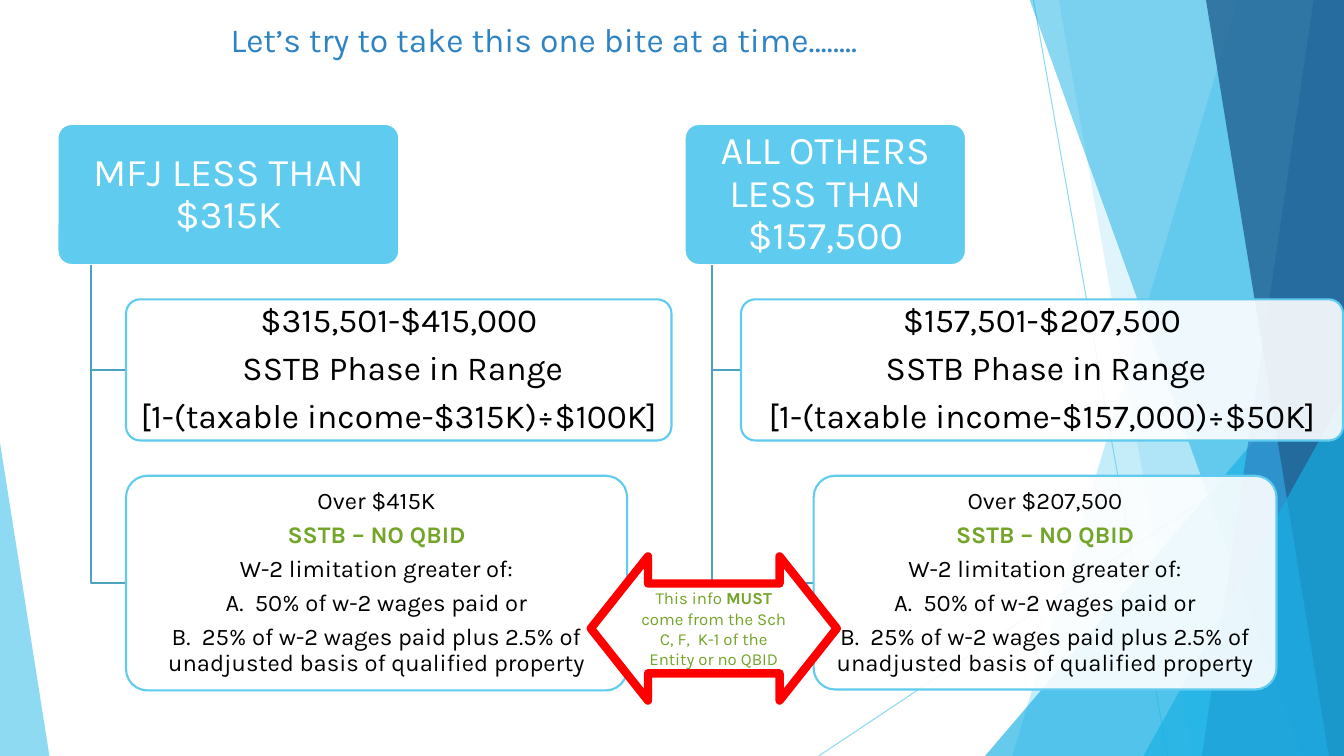
import pptx
import pptx.dml.color
import pptx.enum.shapes
import pptx.enum.text
import pptx.oxml
import pptx.oxml.ns
import pptx.util

PX = 9144
WIDTH, HEIGHT = 1333, 750
FONT = "Karla"
SKY, CYAN, BLUE, NAVY = "5FCBEF", "17B0E4", "2E83C3", "226292"
WHITE, BLACK, RED, GREEN, BRANCH = "FFFFFF", "000000", "FF0000", "72A528", "4CA3BF"
PRESET = pptx.enum.shapes.MSO_SHAPE
CENTER = pptx.enum.text.PP_ALIGN.CENTER
MIDDLE = pptx.enum.text.MSO_ANCHOR.MIDDLE

COLUMNS = [
    {
        "header": (57, 339, "MFJ LESS THAN $315K"),
        "phase": (125, 541, ["$315,501-$415,000", " SSTB Phase in Range",
                             "[1-(taxable income-$315K)÷$100K]"]),
        "over": (125, 497, 213, "Over $415K"),
    },
    {
        "header": (679, 279, "ALL OTHERS LESS THAN $157,500"),
        "phase": (735, 597, ["$157,501-$207,500", " SSTB Phase in Range",
                             "[1-(taxable income-$157,000)÷$50K]"]),
        "over": (807, 459, 212, "Over $207,500"),
    },
]
LIMITATION = [
    "W-2 limitation greater of:",
    "A.  50% of w-2 wages paid or",
    "B.  25% of w-2 wages paid plus 2.5% of unadjusted basis of qualified property",
]


def px(*lengths):
    return [pptx.util.Emu(length * PX) for length in lengths]


def paint(fill, color, opacity=100):
    fill.solid()
    fill.fore_color.rgb = pptx.dml.color.RGBColor.from_string(color)
    if opacity < 100:
        element = fill._xPr.find(".//" + pptx.oxml.ns.qn("a:srgbClr"))
        alpha = pptx.oxml.parse_xml(
            f'<a:alpha {pptx.oxml.ns.nsdecls("a")} val="{opacity * 1000}"/>')
        element.append(alpha)


def draw_line(line, color, width, opacity=100):
    paint(line.fill, color, opacity)
    line.width = pptx.util.Pt(width)


def add_ray(slide, start, end):
    ray = slide.shapes.add_connector(
        pptx.enum.shapes.MSO_CONNECTOR.STRAIGHT, *px(*start, *end))
    draw_line(ray.line, SKY, 0.75, 70)
    ray._element.spPr.append(
        pptx.oxml.parse_xml(f'<a:effectLst {pptx.oxml.ns.nsdecls("a")}/>'))


def add_outline(slide, points, close):
    builder = slide.shapes.build_freeform(*points[0], scale=PX)
    builder.add_line_segments(points[1:], close=close)
    shape = builder.convert_to_shape()
    shape.shadow.inherit = False
    return shape


def add_band(slide, top_left, bottom_left, color, opacity):
    corners = [(top_left, -1), (WIDTH, -1), (WIDTH, HEIGHT), (bottom_left, HEIGHT)]
    band = add_outline(slide, corners, True)
    paint(band.fill, color, opacity)
    band.line.fill.background()


def add_branch(slide, trunk, top, end_x, end_y):
    branch = add_outline(slide, [(trunk, top), (trunk, end_y), (end_x, end_y)], False)
    branch.fill.background()
    draw_line(branch.line, BRANCH, 1.5)


def add_preset(slide, preset, box, adjustments, color, opacity=100):
    shape = slide.shapes.add_shape(preset, *px(*box))
    shape.shadow.inherit = False
    for index, value in enumerate(adjustments):
        shape.adjustments[index] = value
    paint(shape.fill, color, opacity)
    return shape


def add_triangle(slide, box, apex, color, opacity):
    triangle = add_preset(slide, PRESET.ISOSCELES_TRIANGLE, box, [apex], color, opacity)
    triangle.line.fill.background()


def write(shape, paragraphs, size, spaced=False):
    frame = shape.text_frame
    frame.word_wrap = True
    for index, runs in enumerate(paragraphs):
        paragraph = frame.add_paragraph() if index else frame.paragraphs[0]
        paragraph.alignment = CENTER
        if spaced:
            paragraph.line_spacing = 0.9
            paragraph.space_after = pptx.util.Pt(round(size * 0.35, 1))
        for text, color, bold in runs:
            run = paragraph.add_run()
            run.text = text
            run.font.name = FONT
            run.font.size = pptx.util.Pt(size)
            run.font.bold = bold
            paint(run.font.fill, color)


def add_card(slide, box, fill, opacity, border, paragraphs, size, margins):
    card = add_preset(slide, PRESET.ROUNDED_RECTANGLE, box, [0.1], fill, opacity)
    draw_line(card.line, border, 1.5)
    frame = card.text_frame
    frame.vertical_anchor = MIDDLE
    frame.margin_left, frame.margin_top = px(*margins)
    frame.margin_right, frame.margin_bottom = px(*margins)
    write(card, paragraphs, size, spaced=True)


def add_background(slide):
    add_ray(slide, (1025, 0), (1158, HEIGHT))
    add_ray(slide, (WIDTH, 403), (812, HEIGHT))
    add_band(slide, 1228, 1004, SKY, 36)
    add_band(slide, 1050, 1183, SKY, 20)
    add_triangle(slide, (977, 333, 356, 417), 1, CYAN, 66)
    add_band(slide, 1021, 1291, CYAN, 50)
    add_band(slide, 1303, 1192, BLUE, 70)
    add_band(slide, 1196, 1318, NAVY, 80)
    add_triangle(slide, (1134, 393, 199, 357), 1, CYAN, 66)
    add_triangle(slide, (0, 439, 49, 311), 0, SKY, 70)


def add_column(slide, header, phase, over):
    header_top, phase_top, over_top, card_height = 123, 297, 472, 140
    left, width, title = header
    trunk = left + width // 10
    header_bottom = header_top + card_height
    add_card(slide, (left, header_top, width, card_height), SKY, 100, WHITE,
             [[(title, WHITE, False)]], 28, (6, 4))

    left, width, lines = phase
    add_branch(slide, trunk, header_bottom, left, phase_top + card_height // 2)
    add_card(slide, (left, phase_top, width, card_height), WHITE, 90, SKY,
             [[(line, BLACK, False)] for line in lines], 24, (5, 3))

    left, width, height, threshold = over
    add_branch(slide, trunk, header_bottom, left, over_top + height // 2)
    paragraphs = [[(line, BLACK, False)] for line in [threshold, *LIMITATION]]
    paragraphs.insert(1, [("SSTB – NO QBID", GREEN, True)])
    add_card(slide, (left, over_top, width, height), WHITE, 90, SKY,
             paragraphs, 17, (4, 2))


def add_title(slide):
    title = slide.shapes.add_textbox(*px(56, 14, 967, 50))
    write(title, [[("Let’s try to take this one bite at a time……..", BLUE, False)]], 24)


def add_reminder(slide):
    arrow = add_preset(slide, PRESET.LEFT_RIGHT_ARROW, (586, 552, 244, 143),
                       [0.623, 0.397], WHITE)
    draw_line(arrow.line, RED, 6)
    arrow.text_frame.vertical_anchor = MIDDLE
    write(arrow, [[
        ("This info ", GREEN, False),
        ("MUST", GREEN, True),
        (" come from the Sch C, F,  K-1 of the Entity or no QBID", GREEN, False),
    ]], 12)


def main():
    presentation = pptx.Presentation()
    presentation.slide_width, presentation.slide_height = px(WIDTH, HEIGHT)
    slide = presentation.slides.add_slide(presentation.slide_layouts[6])
    add_background(slide)
    for column in COLUMNS:
        add_column(slide, **column)
    add_title(slide)
    add_reminder(slide)
    presentation.save("out.pptx")


if __name__ == "__main__":
    main()
